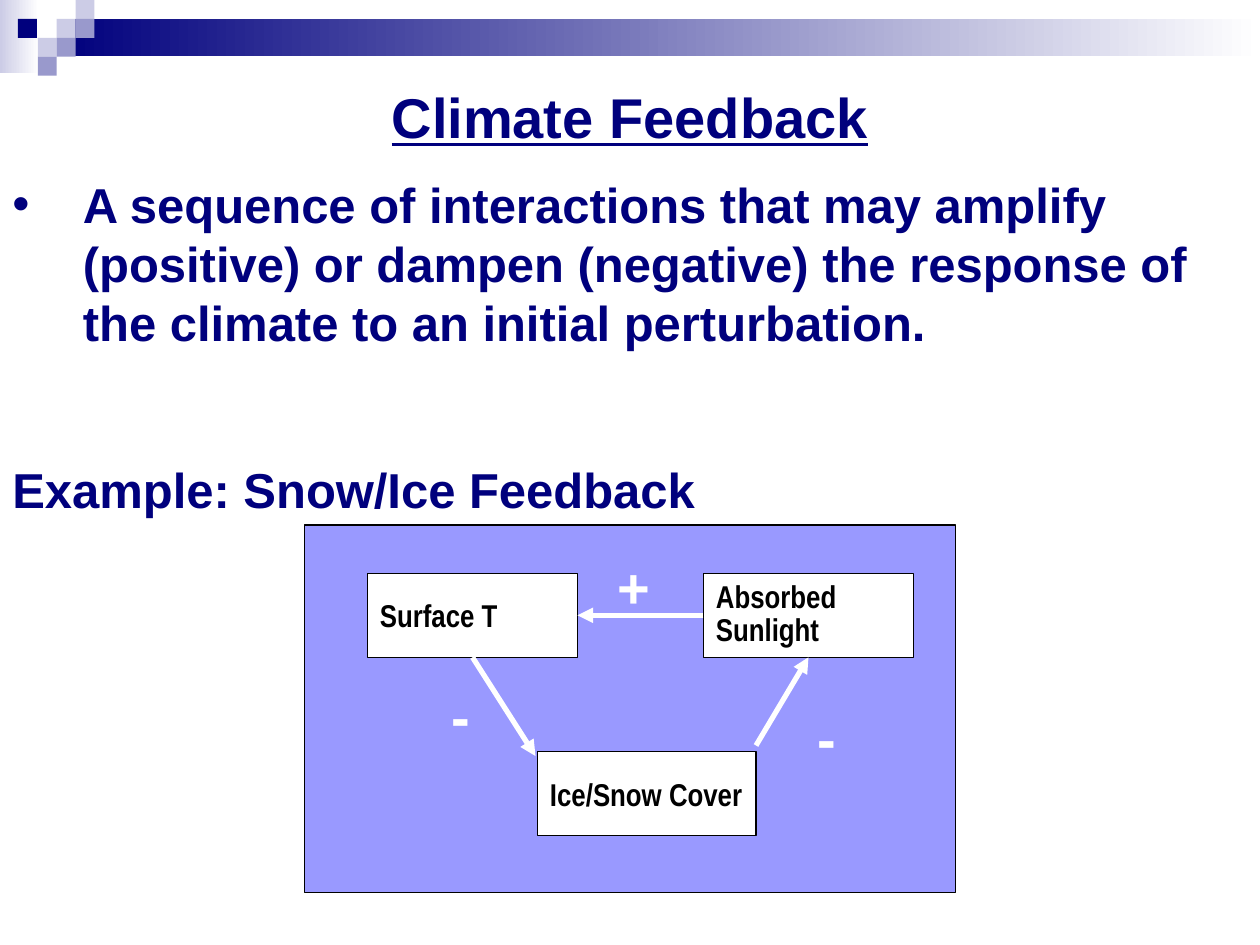
from lxml import etree
from pptx import Presentation
from pptx import util as u
from pptx.dml.color import RGBColor
from pptx.enum import shapes, text
from pptx.oxml.ns import qn

COLOURS = {
    "navy": "00007D", "mist": "CCCCE6", "lilac": "9999CC",
    "panel": "9999FF", "white": "FFFFFF", "black": "000000",
}
COLUMNS, ROWS = 120, 90
TILE = 1.8  # side of a decoration square, in grid units


def rgb(name):
    return RGBColor.from_string(COLOURS[name])


class FeedbackSlide:
    """Holds the style and the slide; lengths are grid columns and rows."""

    def __init__(self, presentation):
        self.column = presentation.slide_width / COLUMNS
        self.row = presentation.slide_height / ROWS
        self.slide = presentation.slides.add_slide(presentation.slide_layouts[6])

    def place(self, left, top, width, height):
        return (round(left * self.column), round(top * self.row),
                round(width * self.column), round(height * self.row))

    def rectangle(self, area, fill, line=None, preset=shapes.MSO_SHAPE.RECTANGLE):
        shape = self.slide.shapes.add_shape(preset, *self.place(*area))
        shape.shadow.inherit = False
        if isinstance(fill, tuple):
            shape.fill.gradient()
            shape.fill.gradient_angle = 0
            for stop, name, position in zip(shape.fill.gradient_stops, fill, (0, 1)):
                stop.color.rgb = rgb(name)
                stop.position = position
        else:
            shape.fill.solid()
            shape.fill.fore_color.rgb = rgb(fill)
        if line:
            shape.line.color.rgb = rgb(line)
            shape.line.width = u.Pt(0.75)
        else:
            shape.line.fill.background()
        return shape

    def tile(self, column, row, fill):
        self.rectangle((column * TILE, row * TILE, TILE, TILE), fill)

    def style(self, paragraph, size, colour, font="Arial"):
        paragraph.font.size = u.Pt(size)
        paragraph.font.name = font
        paragraph.font.bold = True
        paragraph.font.color.rgb = rgb(colour)

    def process(self, area, lines):
        shape = self.rectangle(area, "white", "black",
                               shapes.MSO_SHAPE.FLOWCHART_PROCESS)
        frame = shape.text_frame
        frame.word_wrap = True
        frame.margin_right = 0
        frame.vertical_anchor = text.MSO_ANCHOR.MIDDLE
        frame.text = "\n".join(lines)
        for paragraph in frame.paragraphs:
            paragraph.alignment = text.PP_ALIGN.LEFT
            if len(lines) > 1:
                paragraph.line_spacing = 0.85
            self.style(paragraph, 18, "black", "Arial Narrow")
        return shape

    def arrow(self, start, end, begin=None, finish=None):
        left, top, right, bottom = self.place(*start, *end)
        line = self.slide.shapes.add_connector(
            shapes.MSO_CONNECTOR.STRAIGHT, left, top, right, bottom)
        if begin:
            line.begin_connect(*begin)
        if finish:
            line.end_connect(*finish)
        line.line.color.rgb = rgb("white")
        line.line.width = u.Pt(3)
        outline = line._element.spPr.find(qn("a:ln"))
        etree.SubElement(outline, qn("a:tailEnd"), type="triangle")
        etree.SubElement(line._element.spPr, qn("a:effectLst"))

    def sign(self, area, symbol):
        frame = self.slide.shapes.add_textbox(*self.place(*area)).text_frame
        frame.word_wrap = False
        frame.text = symbol
        self.style(frame.paragraphs[0], 32, "white")

    def body(self, area, title, definition, example):
        frame = self.slide.shapes.add_textbox(*self.place(*area)).text_frame
        frame.word_wrap = True
        frame.text = "\n".join((title, definition, example))
        heading, bullet, caption = frame.paragraphs

        properties = bullet._p.get_or_add_pPr()
        indent = u.Inches(0.56)
        properties.set("marL", str(indent))
        properties.set("indent", str(-indent))
        etree.SubElement(properties, qn("a:buFont"), typeface="Arial")
        etree.SubElement(properties, qn("a:buChar"), char="•")

        for paragraph, size in ((heading, 32), (bullet, 28), (caption, 28)):
            self.style(paragraph, size, "navy")
        heading.alignment = text.PP_ALIGN.CENTER
        heading.font.underline = True
        bullet.space_before = u.Pt(14)
        caption.space_before = u.Pt(62)


def main():
    presentation = Presentation()
    presentation.slide_width, presentation.slide_height = u.Inches(10), u.Inches(7.5)
    page = FeedbackSlide(presentation)

    # Header band and squares
    page.rectangle((0, 0, 3.7, 7), ("mist", "white"))
    page.rectangle((3 * TILE, TILE, COLUMNS - 3 * TILE, 3.55), ("navy", "white"))
    for tile in ((3, 1, "mist"), (4, 0, "mist"), (4, 1, "lilac"), (2, 2, "mist"),
                 (0.95, 1, "navy"), (3, 2, "lilac"), (2, 3, "lilac")):
        page.tile(*tile)

    # Title, definition and example
    page.body((0, 7.3, COLUMNS, 42), "Climate Feedback",
              "A sequence of interactions that may amplify (positive) or dampen "
              "(negative) the response of the climate to an initial perturbation.",
              "Example: Snow/Ice Feedback")

    # Feedback loop
    page.rectangle((29, 50, 62, 35), "panel", "black")
    surface = page.process((35, 54.6, 20, 8), ["Surface T"])
    page.process((51.2, 71.6, 20.8, 8), ["Ice/Snow Cover"])
    sunlight = page.process((67, 54.6, 20, 8), ["Absorbed", "Sunlight"])
    page.arrow((45, 62.6), (51, 72), begin=(surface, 2))
    page.arrow((72, 71), (77, 62.6), finish=(sunlight, 2))
    page.arrow((67, 58.6), (55, 58.6), begin=(sunlight, 1), finish=(surface, 3))

    # Signs of the interactions
    page.sign((41.8, 64.3, 4.2, 7.7), "-")
    page.sign((76.7, 66.4, 4.2, 7.7), "-")
    page.sign((57.6, 52, 5.6, 7.7), "+")

    presentation.save("out.pptx")


if __name__ == "__main__":
    main()
